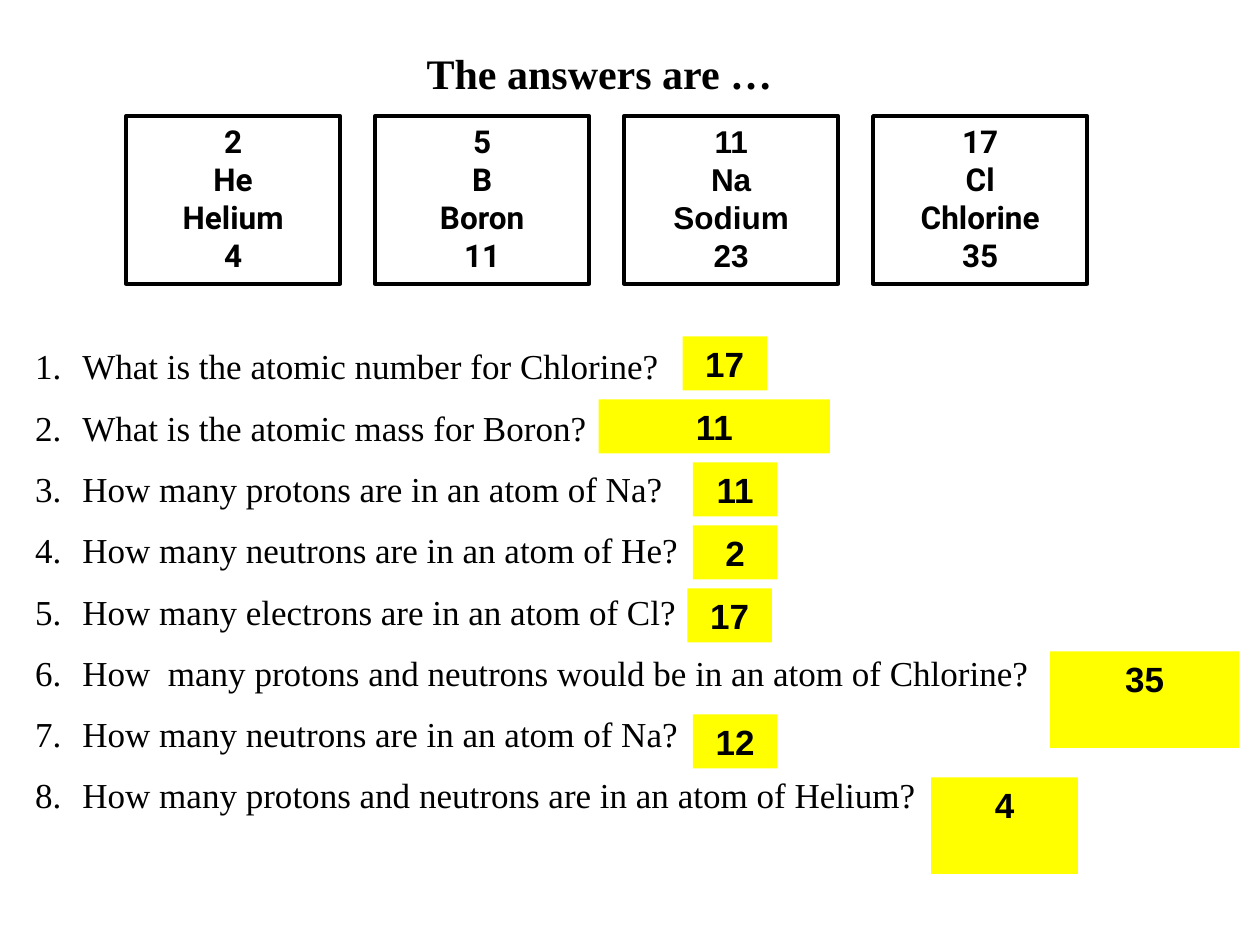
from dataclasses import dataclass

from lxml import etree
from pptx import Presentation
from pptx.dml.color import RGBColor
from pptx.enum.shapes import MSO_SHAPE
from pptx.enum.text import MSO_ANCHOR, MSO_AUTO_SIZE, PP_ALIGN
from pptx.oxml.ns import qn
from pptx.shapes.autoshape import Shape
from pptx.slide import Slide
from pptx.text.text import TextFrame
from pptx.util import Cm, Pt

RECTANGLE = MSO_SHAPE.RECTANGLE
CENTER, LEFT = PP_ALIGN.CENTER, PP_ALIGN.LEFT
TOP = MSO_ANCHOR.TOP
NO_AUTOFIT = MSO_AUTO_SIZE.NONE

BLACK = RGBColor(0x00, 0x00, 0x00)
YELLOW = RGBColor(0xFF, 0xFF, 0x00)
SERIF, SANS, CARD_SANS = "Times New Roman", "Arial", "Roboto"

CARD_LEFT, CARD_TOP, CARD_PITCH = 2.54, 2.34, 5.02
CARD_WIDTH, CARD_HEIGHT = 4.32, 3.38
ANSWER_TOP, ANSWER_PITCH = 6.78, 1.27
NUMBER_INDENT = Cm(0.95)


@dataclass(frozen=True)
class Element:
    number: int
    symbol: str
    name: str
    mass: int
    font: str = CARD_SANS


@dataclass(frozen=True)
class Question:
    text: str
    answer: str
    left: float
    width: float = 1.7
    height: float = 1.09


ELEMENTS = [
    Element(2, "He", "Helium", 4),
    Element(5, "B", "Boron", 11),
    Element(11, "Na", "Sodium", 23, SANS),
    Element(17, "Cl", "Chlorine", 35),
]

QUESTIONS = [
    Question("What is the atomic number for Chlorine?", "17", 13.76),
    Question("What is the atomic mass for Boron?", "11", 12.07, 4.66),
    Question("How many protons are in an atom of Na?", "11", 13.97),
    Question("How many neutrons are in an atom of He?", "2", 13.97),
    Question("How many electrons are in an atom of Cl?", "17", 13.86),
    Question("How  many protons and neutrons would be in an atom of Chlorine?",
             "35", 21.17, 3.81, 1.95),
    Question("How many neutrons are in an atom of Na?", "12", 13.97),
    Question("How many protons and neutrons are in an atom of Helium?",
             "4", 18.77, 2.96, 1.95),
]


def format_text(frame: TextFrame, font: str, size: int, bold: bool = True,
                alignment: PP_ALIGN = CENTER) -> None:
    frame.word_wrap = True
    frame.auto_size = NO_AUTOFIT
    frame.vertical_anchor = TOP
    for paragraph in frame.paragraphs:
        paragraph.alignment = alignment
        for span in paragraph.runs:
            span.font.name = font
            span.font.size = Pt(size)
            span.font.bold = bold
            span.font.color.rgb = BLACK


def add_box(page: Slide, left: float, top: float, width: float, height: float,
            text: str, font: str, size: int) -> Shape:
    box = page.shapes.add_shape(RECTANGLE, Cm(left), Cm(top), Cm(width), Cm(height))
    box.shadow.inherit = False
    box.text_frame.text = text
    format_text(box.text_frame, font, size)
    return box


def add_title(page: Slide) -> None:
    title = page.shapes.title
    title.left, title.top, title.width, title.height = Cm(1.9), Cm(0.84), Cm(20.37), Cm(1.27)
    title.text_frame.text = "The answers are …"
    format_text(title.text_frame, SERIF, 24)


def add_card(page: Slide, index: int, element: Element) -> None:
    text = f"{element.number}\v{element.symbol}\v{element.name}\v{element.mass}"
    card = add_box(page, CARD_LEFT + index * CARD_PITCH, CARD_TOP,
                   CARD_WIDTH, CARD_HEIGHT, text, element.font, 18)
    card.fill.background()
    card.line.color.rgb = BLACK
    card.line.width = Pt(2.25)


def add_questions(page: Slide) -> None:
    box = page.shapes.add_textbox(Cm(0.46), Cm(6.83), Cm(24.77), Cm(9.98))
    frame = box.text_frame
    frame.text = "\n".join(question.text for question in QUESTIONS)
    for index, paragraph in enumerate(frame.paragraphs):
        properties = paragraph._p.get_or_add_pPr()
        properties.set("marL", str(NUMBER_INDENT))
        properties.set("indent", str(-NUMBER_INDENT))
        etree.SubElement(properties, qn("a:buFont"), typeface="+mj-lt")
        etree.SubElement(properties, qn("a:buAutoNum"), type="arabicPeriod")
        if index:
            paragraph.space_before = Pt(11)
    format_text(frame, SERIF, 20, bold=False, alignment=LEFT)


def add_answer(page: Slide, index: int, question: Question) -> None:
    answer = add_box(page, question.left, ANSWER_TOP + index * ANSWER_PITCH,
                     question.width, question.height, question.answer, SANS, 20)
    answer.fill.solid()
    answer.fill.fore_color.rgb = YELLOW
    answer.line.fill.background()


def main() -> None:
    deck = Presentation()
    deck.slide_width, deck.slide_height = Cm(25.4), Cm(19.05)
    page = deck.slides.add_slide(deck.slide_layouts.get_by_name("Title Only"))
    add_title(page)
    for index, element in enumerate(ELEMENTS):
        add_card(page, index, element)
    add_questions(page)
    for index, question in enumerate(QUESTIONS):
        add_answer(page, index, question)
    deck.save("out.pptx")


if __name__ == "__main__":
    main()
